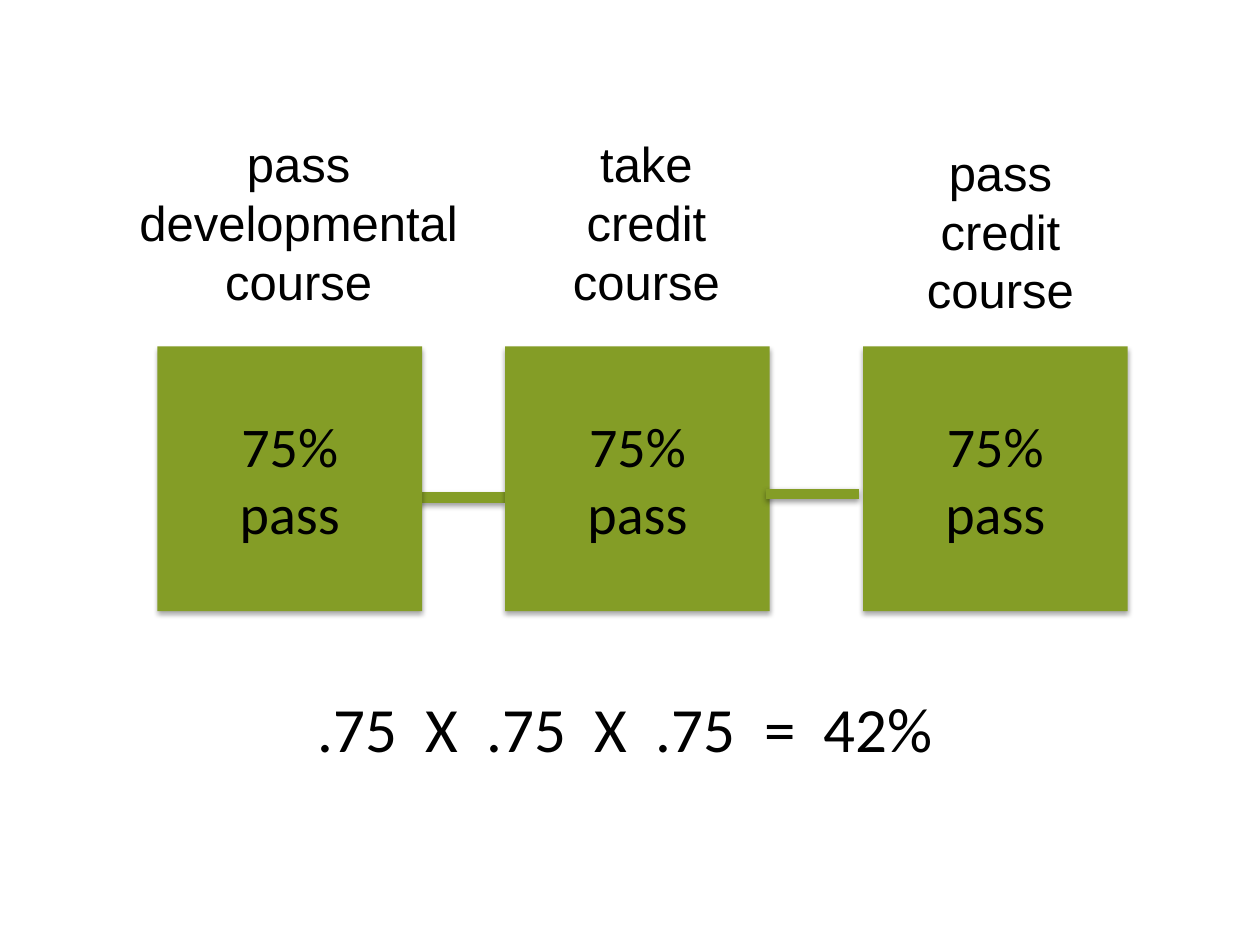
from lxml import etree
from pptx import Presentation
from pptx.dml.color import RGBColor
from pptx.enum.shapes import MSO_CONNECTOR, MSO_SHAPE
from pptx.enum.text import MSO_ANCHOR, PP_ALIGN
from pptx.oxml.ns import qn
from pptx.util import Inches, Pt

STRAIGHT = MSO_CONNECTOR.STRAIGHT
RECTANGLE = MSO_SHAPE.RECTANGLE
TOP, MIDDLE = MSO_ANCHOR.TOP, MSO_ANCHOR.MIDDLE
LEFT, CENTER = PP_ALIGN.LEFT, PP_ALIGN.CENTER

GREEN = RGBColor(0x84, 0x9D, 0x26)
BLACK = RGBColor(0x00, 0x00, 0x00)

BOX_TOP, BOX_SIDE = 2.75, 2.1
LABEL_HEIGHT = 1.51


class PassRatePage:
    """Style and elements of the pass-rate slide."""

    heading_font, body_font = "Arial", "Calibri"

    def __init__(self, deck):
        self.page = deck.slides.add_slide(deck.slide_layouts[6])

    def add_shadow(self, shape, opacity, distance):
        effects = etree.SubElement(shape._element.spPr, qn("a:effectLst"))
        outer = etree.SubElement(
            effects, qn("a:outerShdw"), blurRad=str(Pt(3.1)),
            dist=str(Pt(distance)), dir="5400000", rotWithShape="0")
        color = etree.SubElement(outer, qn("a:srgbClr"), val=str(BLACK))
        etree.SubElement(color, qn("a:alpha"), val=str(opacity * 1000))

    def set_text(self, shape, text, font, size, align, anchor=TOP, wrap=True):
        frame = shape.text_frame
        frame.text = text
        frame.word_wrap = wrap
        frame.vertical_anchor = anchor
        for para in frame.paragraphs:
            para.alignment = align
            for span in para.runs:
                span.font.name = font
                span.font.size = Pt(size)
                span.font.color.rgb = BLACK

    def link(self, start, end, y):
        line = self.page.shapes.add_connector(
            STRAIGHT, Inches(start), Inches(y), Inches(end), Inches(y))
        line.line.color.rgb = GREEN
        line.line.width = Pt(6)
        self.add_shadow(line, opacity=38, distance=1.6)

    def box(self, left, text):
        box = self.page.shapes.add_shape(
            RECTANGLE, Inches(left), Inches(BOX_TOP),
            Inches(BOX_SIDE), Inches(BOX_SIDE))
        box.fill.solid()
        box.fill.fore_color.rgb = GREEN
        box.line.fill.background()
        self.add_shadow(box, opacity=35, distance=1.8)
        self.set_text(box, text, self.body_font, 32, CENTER, MIDDLE)

    def label(self, left, top, width, text):
        label = self.page.shapes.add_textbox(
            Inches(left), Inches(top), Inches(width), Inches(LABEL_HEIGHT))
        self.set_text(label, text, self.heading_font, 28, CENTER, wrap=False)

    def equation(self, left, top, width, height, text):
        equation = self.page.shapes.add_textbox(
            Inches(left), Inches(top), Inches(width), Inches(height))
        self.set_text(equation, text, self.body_font, 36, LEFT)


def main():
    deck = Presentation()
    deck.slide_width, deck.slide_height = Inches(10), Inches(7.5)
    page = PassRatePage(deck)

    # First link lies behind the boxes
    page.link(3.27, 4.01, 3.95)

    # Steps: box left, label left, label top, label width, label text
    steps = [
        (1.25, 0.99, 1.01, 2.76, "pass\ndevelopmental\ncourse"),
        (4.01, 4.44, 1.01, 1.38, "take\ncredit\ncourse"),
        (6.85, 7.25, 1.08, 1.38, "pass\ncredit\ncourse"),
    ]
    for box_left, label_left, label_top, label_width, text in steps:
        page.label(label_left, label_top, label_width, text)
        page.box(box_left, "75%\npass")

    # Second link lies in front of the boxes
    page.link(6.08, 6.82, 3.92)

    # Combined rate
    page.equation(2.42, 5.42, 5.25, 0.71, ".75  X  .75  X  .75  =  42%")

    deck.save("out.pptx")


if __name__ == "__main__":
    main()
